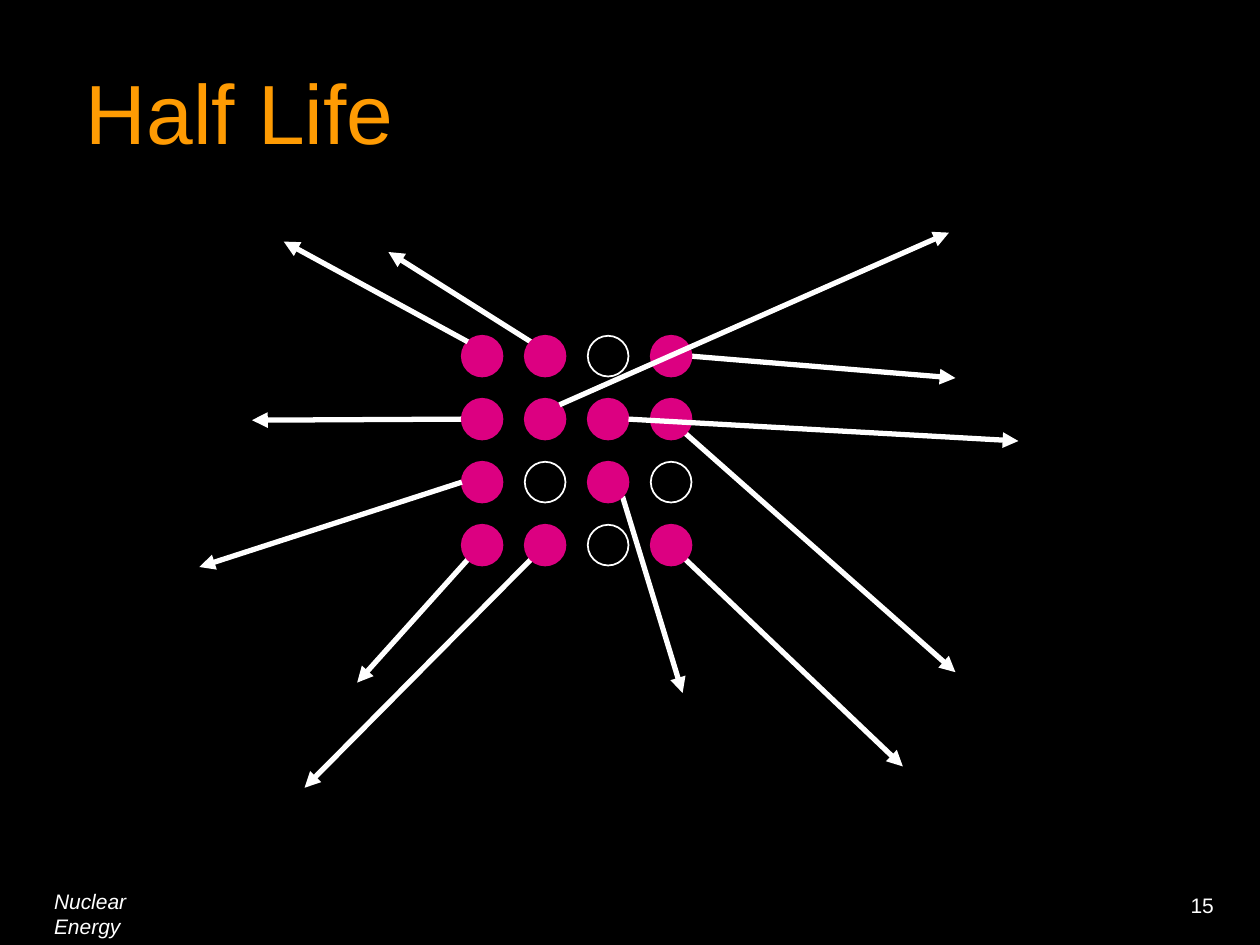
from math import hypot

from lxml.etree import SubElement
from pptx import Presentation
from pptx.dml.color import RGBColor
from pptx.enum.shapes import MSO_CONNECTOR, MSO_SHAPE
from pptx.enum.text import MSO_ANCHOR
from pptx.oxml.ns import qn
from pptx.util import Cm, Pt

BLACK = RGBColor(0x00, 0x00, 0x00)
WHITE = RGBColor(0xFF, 0xFF, 0xFF)
ORANGE = RGBColor(0xFE, 0x9B, 0x03)
MAGENTA = RGBColor(0xDC, 0x00, 0x81)

# Atom grid, in centimetres
GRID_LEFT, GRID_TOP = 9.31, 6.77
PITCH = 1.27
DIAMETER = 0.82
GRID_SIZE = 4
STABLE_ATOMS = {(0, 2), (2, 1), (2, 3), (3, 2)}  # (row, column)

# (row, column), compass direction of the starting point, end point in cm
RAYS_BEHIND = [
    ((3, 0), (-1, 1), (7.2, 13.76)),
    ((1, 0), (-1, 0), (5.08, 8.47)),
    ((0, 1), (-1, -1), (7.83, 5.08)),
    ((2, 2), (1, 1), (13.76, 13.97)),
    ((3, 1), (-1, 1), (6.14, 15.88)),
    ((1, 3), (1, 1), (19.26, 13.55)),
    ((0, 3), (1, 0), (19.26, 7.62)),
    ((3, 3), (1, 1), (18.2, 15.45)),
]
RAYS_IN_FRONT = [
    ((0, 0), (-1, -1), (5.72, 4.87)),
    ((1, 1), (1, -1), (19.13, 4.69)),
    ((1, 2), (1, 0), (20.53, 8.89)),
    ((2, 0), (-1, 0), (4.02, 11.43)),
]


def add_label(slide, text, box, size, color, italic=False, anchor=MSO_ANCHOR.TOP):
    label = slide.shapes.add_textbox(*map(Cm, box))
    frame = label.text_frame
    frame.word_wrap = True
    frame.vertical_anchor = anchor
    frame.text = text
    font = frame.paragraphs[0].runs[0].font
    font.name = "Arial"
    font.size = Pt(size)
    font.italic = italic
    font.color.rgb = color


def atom_corner(row, column):
    return GRID_LEFT + column * PITCH, GRID_TOP + row * PITCH


def add_atom(slide, row, column):
    """Draw a decaying atom filled, a stable one as an outline."""
    left, top = atom_corner(row, column)
    atom = slide.shapes.add_shape(
        MSO_SHAPE.OVAL, Cm(left), Cm(top), Cm(DIAMETER), Cm(DIAMETER))
    atom.shadow.inherit = False
    atom.line.width = Pt(1)
    if (row, column) in STABLE_ATOMS:
        atom.fill.background()
        atom.line.color.rgb = WHITE
    else:
        atom.fill.solid()
        atom.fill.fore_color.rgb = MAGENTA
        atom.line.color.rgb = MAGENTA


def add_ray(slide, atom, direction, end):
    """Draw an arrow from the rim of an atom to its end point."""
    reach = DIAMETER / 2 / hypot(*direction)
    start = [corner + DIAMETER / 2 + reach * step
             for corner, step in zip(atom_corner(*atom), direction)]
    ray = slide.shapes.add_connector(
        MSO_CONNECTOR.STRAIGHT, *map(Cm, (*start, *end)))
    ray.line.color.rgb = WHITE
    ray.line.width = Pt(3)
    properties = ray.element.spPr
    SubElement(properties.find(qn("a:ln")), qn("a:tailEnd"), type="triangle")
    SubElement(properties, qn("a:effectLst"))


def main():
    deck = Presentation()
    deck.slide_width, deck.slide_height = Cm(25.4), Cm(19.05)
    slide = deck.slides.add_slide(deck.slide_layouts[6])
    slide.background.fill.solid()
    slide.background.fill.fore_color.rgb = BLACK

    add_label(slide, "15", (23.75, 17.86, 1.02, 0.76), 12, WHITE)
    add_label(slide, "Nuclear Energy", (0.84, 17.78, 3.38, 0.76), 12, WHITE,
              italic=True)
    add_label(slide, "Half Life", (1.48, 1.27, 18.62, 1.93), 48, ORANGE,
              anchor=MSO_ANCHOR.MIDDLE)

    for ray in RAYS_BEHIND:
        add_ray(slide, *ray)
    for row in range(GRID_SIZE):
        for column in range(GRID_SIZE):
            add_atom(slide, row, column)
    for ray in RAYS_IN_FRONT:
        add_ray(slide, *ray)

    deck.save("out.pptx")


if __name__ == "__main__":
    main()
